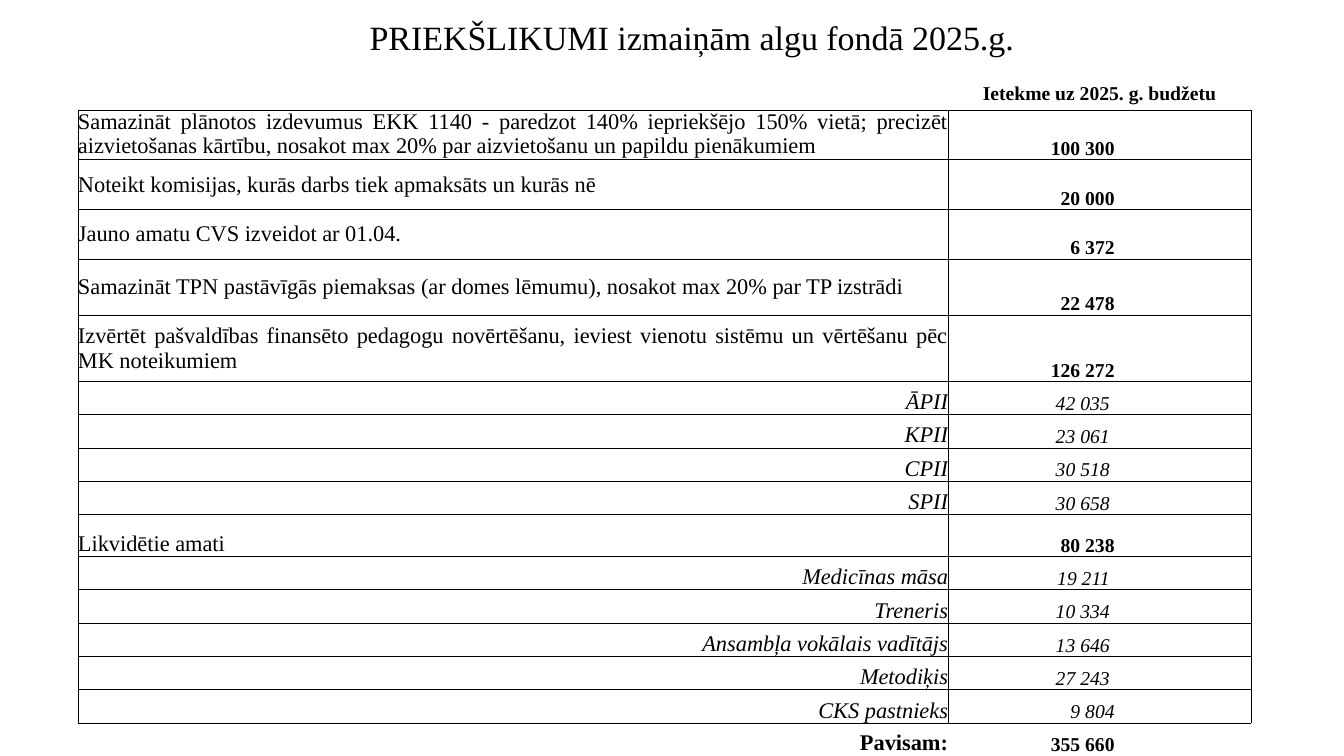
from dataclasses import dataclass

from lxml import etree
from pptx import Presentation
from pptx import util as u
from pptx.dml import color
from pptx.enum import text
from pptx.oxml import ns

Pt = u.Pt
Side = text.PP_ALIGN
Mid = text.MSO_ANCHOR.MIDDLE
Low = text.MSO_ANCHOR.BOTTOM


@dataclass(frozen=True)
class Theme:
    font: str = "Times New Roman"
    ink: str = "000000"
    title: float = 24.3
    label: float = 16
    value: float = 14
    lead: float = 16.6
    line: float = 0.5


@dataclass(frozen=True)
class Look:
    size: float
    bold: bool = False
    slant: bool = False


@dataclass(frozen=True)
class Row:
    label: str
    value: str
    high: float = 23.8
    side: Side = Side.RIGHT
    hold: text.MSO_ANCHOR = Low
    sub: bool = True
    pad: float = 101
    tight: bool = False


THEME = Theme()
HEAD = "Ietekme uz 2025. g. budžetu"
WIDE = (621.5, 216.5)


def main_row(label: str, value: str, high: float = 35.5, side: Side = Side.JUSTIFY,
             hold: text.MSO_ANCHOR = Mid, tight: bool = False) -> Row:
    return Row(label, value, high, side, hold, False, 97.5, tight)


ROWS = [
    main_row("Samazināt plānotos izdevumus EKK 1140 - paredzot 140% iepriekšējo 150% vietā; "
             "precizēt aizvietošanas kārtību, nosakot max 20% par aizvietošanu un papildu "
             "pienākumiem", "100 300", tight=True),
    main_row("Noteikt komisijas, kurās darbs tiek apmaksāts un kurās nē", "20 000"),
    main_row("Jauno amatu CVS izveidot ar 01.04.", "6 372"),
    main_row("Samazināt TPN pastāvīgās piemaksas (ar domes lēmumu), nosakot max 20% par "
             "TP izstrādi", "22 478", 40),
    main_row("Izvērtēt pašvaldības finansēto pedagogu novērtēšanu, ieviest vienotu sistēmu un "
             "vērtēšanu pēc MK noteikumiem", "126 272", 47.3),
    Row("ĀPII", "42 035"),
    Row("KPII", "23 061"),
    Row("CPII", "30 518"),
    Row("SPII", "30 658"),
    main_row("Likvidētie amati", "80 238", 30, Side.LEFT, Low),
    Row("Medicīnas māsa", "19 211"),
    Row("Treneris", "10 334"),
    Row("Ansambļa vokālais vadītājs", "13 646"),
    Row("Metodiķis", "27 243"),
    Row("CKS pastnieks", "9 804", pad=97.5),
]
TOTAL = main_row("Pavisam:", "355 660", 23.4, Side.RIGHT, Low)


def write(frame, words: str, look: Look, side: Side, tight: bool = False) -> None:
    para = frame.paragraphs[0]
    para.alignment = side
    if tight:
        para.line_spacing = Pt(THEME.lead)
    run = para.add_run()
    run.text = words
    font = run.font
    font.name = THEME.font
    font.size = Pt(look.size)
    font.bold = look.bold
    font.italic = look.slant
    font.color.rgb = color.RGBColor.from_string(THEME.ink)


def edge(cell, drawn: str) -> None:
    props = cell._tc.get_or_add_tcPr()
    for spot, key in enumerate("LRTB"):
        line = etree.Element(ns.qn(f"a:ln{key}"), w=str(Pt(THEME.line)))
        if key in drawn:
            fill = etree.SubElement(line, ns.qn("a:solidFill"))
            etree.SubElement(fill, ns.qn("a:srgbClr"), val=THEME.ink)
        else:
            etree.SubElement(line, ns.qn("a:noFill"))
        props.insert(spot, line)


def dress(cell, drawn: str, hold: text.MSO_ANCHOR, pad: float = 0) -> None:
    cell.margin_left = cell.margin_top = cell.margin_bottom = 0
    cell.margin_right = Pt(pad)
    cell.vertical_anchor = hold
    cell.fill.background()
    edge(cell, drawn)


def fill_row(grid, at: int, row: Row, drawn: str, strong: bool = False) -> None:
    grid.rows[at].height = Pt(row.high)
    label, value = grid.cell(at, 0), grid.cell(at, 1)
    dress(label, drawn, row.hold)
    dress(value, drawn, Low, row.pad)
    write(label.text_frame, row.label, Look(THEME.label, strong, row.sub), row.side, row.tight)
    write(value.text_frame, row.value, Look(THEME.value, not row.sub, row.sub), Side.RIGHT)


def add_title(slide) -> None:
    box = slide.shapes.add_textbox(Pt(87.5), Pt(7), Pt(813.5), Pt(39))
    frame = box.text_frame
    frame.word_wrap = True
    frame.vertical_anchor = Mid
    write(frame, "PRIEKŠLIKUMI izmaiņām algu fondā 2025.g.", Look(THEME.title), Side.CENTER)


def add_grid(slide) -> None:
    high = 23.8 + sum(row.high for row in ROWS) + TOTAL.high
    grid = slide.shapes.add_table(len(ROWS) + 2, len(WIDE), Pt(55.7), Pt(54.8),
                                  Pt(sum(WIDE)), Pt(high)).table
    grid.first_row = grid.horz_banding = False
    for col, wide in zip(grid.columns, WIDE):
        col.width = Pt(wide)
    grid.rows[0].height = Pt(23.8)
    for col in range(len(WIDE)):
        dress(grid.cell(0, col), "B", Mid)
    write(grid.cell(0, 1).text_frame, HEAD, Look(THEME.value, True), Side.CENTER)
    for at, row in enumerate(ROWS, 1):
        fill_row(grid, at, row, "LRTB")
    fill_row(grid, len(ROWS) + 1, TOTAL, "T", True)


def main() -> None:
    deck = Presentation()
    deck.slide_width, deck.slide_height = Pt(960), Pt(540)
    slide = deck.slides.add_slide(deck.slide_layouts[6])
    add_title(slide)
    add_grid(slide)
    deck.save("out.pptx")


if __name__ == "__main__":
    main()
